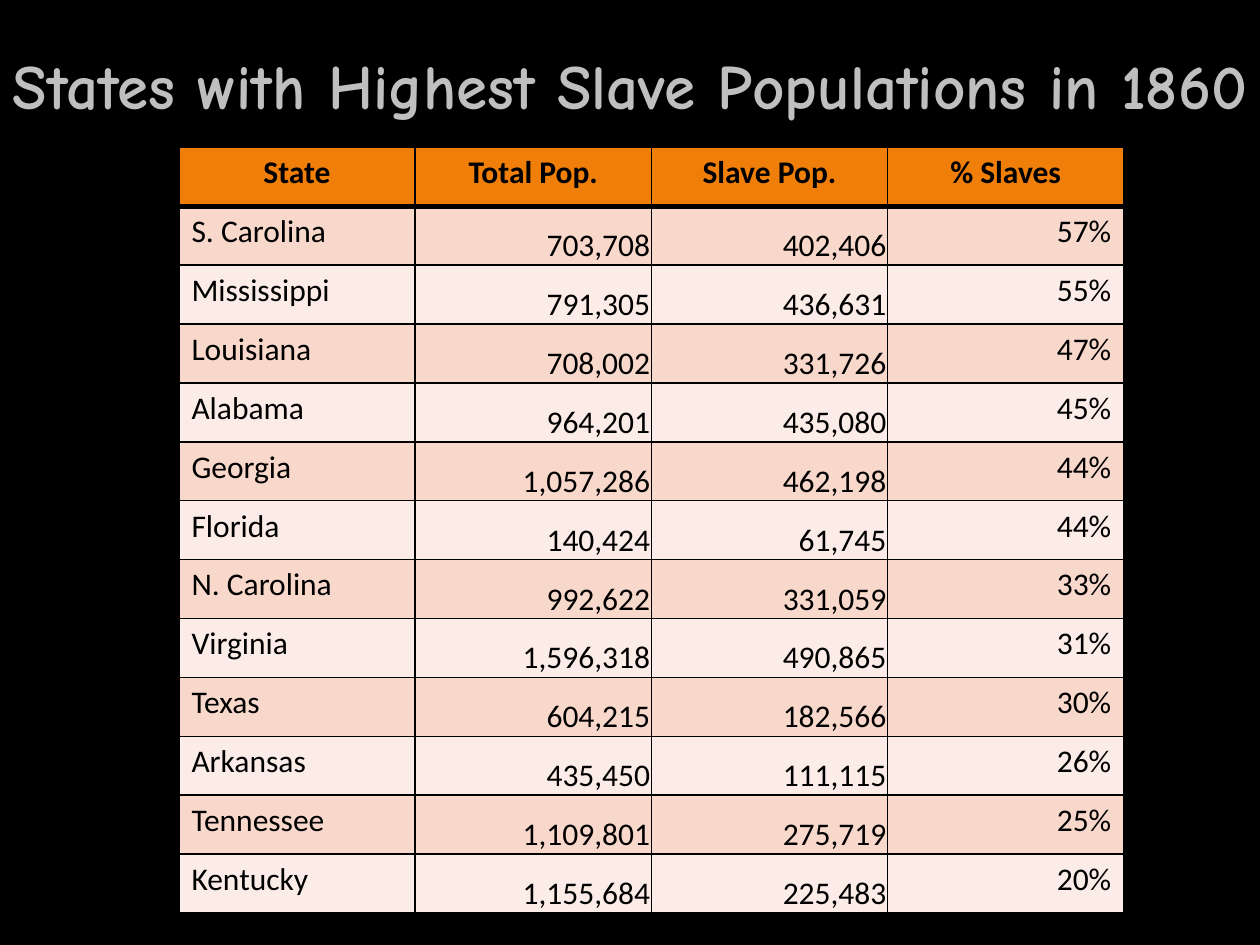
from lxml.etree import SubElement
from pptx import Presentation
from pptx.dml.color import RGBColor as RGB
from pptx.enum.text import MSO_ANCHOR as Anchor, PP_ALIGN as Align
from pptx.oxml.ns import qn
from pptx.util import Inches, Pt

COLORS = {
    "black": "000000",
    "title": "BFBFBF",
    "header": "F07F09",
    "dark_band": "F9D8CC",
    "light_band": "FCECE7",
}
TITLE_FONT = {"name": "Comic Neue", "size": Pt(36), "bold": True}
HEADER_FONT = {"name": "Calibri", "size": Pt(18), "bold": True}
BODY_FONT = {**HEADER_FONT, "bold": False}

NUMBER_CELL = {
    "vertical_anchor": Anchor.BOTTOM,
    "margin_left": Inches(0.01),
    "margin_right": Inches(0.01),
    "margin_top": Inches(0.01),
    "margin_bottom": 0,
}
TEXT_CELL = {"vertical_anchor": Anchor.TOP}
COLUMN_ALIGNS = [Align.LEFT, Align.RIGHT, Align.RIGHT, Align.RIGHT]
COLUMN_FORMATS = [TEXT_CELL, NUMBER_CELL, NUMBER_CELL, TEXT_CELL]

HEADINGS = ["State", "Total Pop.", "Slave Pop.", "% Slaves"]
STATES = [
    ("S. Carolina", 703708, 402406, 57),
    ("Mississippi", 791305, 436631, 55),
    ("Louisiana", 708002, 331726, 47),
    ("Alabama", 964201, 435080, 45),
    ("Georgia", 1057286, 462198, 44),
    ("Florida", 140424, 61745, 44),
    ("N. Carolina", 992622, 331059, 33),
    ("Virginia", 1596318, 490865, 31),
    ("Texas", 604215, 182566, 30),
    ("Arkansas", 435450, 111115, 26),
    ("Tennessee", 1109801, 275719, 25),
    ("Kentucky", 1155684, 225483, 20),
]


def set_all(target, values):
    for name, value in values.items():
        setattr(target, name, value)


class SlideBuilder:
    def __init__(self, deck):
        self.slide = deck.slides.add_slide(deck.slide_layouts[6])
        self.paint(self.slide.background.fill, "black")

    def paint(self, fill, color):
        fill.solid()
        fill.fore_color.rgb = RGB.from_string(COLORS[color])

    def add_text(self, frame, text, align, font, color):
        para = frame.paragraphs[0]
        para.alignment = align
        span = para.add_run()
        span.text = text
        set_all(span.font, font)
        span.font.color.rgb = RGB.from_string(COLORS[color])

    def title(self, text, left, top, width, height):
        box = self.slide.shapes.add_textbox(left, top, width, height)
        set_all(box.text_frame, {
            "word_wrap": True,
            "vertical_anchor": Anchor.MIDDLE,
            "margin_left": 0,
            "margin_right": 0,
        })
        self.add_text(box.text_frame, text, Align.CENTER, TITLE_FONT, "title")

    def borders(self, cell, top, bottom):
        """Rule all four sides; top and bottom are widths in points."""
        properties = cell._tc.get_or_add_tcPr()
        for side, width in {"L": 1, "R": 1, "T": top, "B": bottom}.items():
            line = SubElement(properties, qn(f"a:ln{side}"), w=str(Pt(width)))
            fill = SubElement(line, qn("a:solidFill"))
            SubElement(fill, qn("a:srgbClr"), val=COLORS["black"])

    def cell(self, cell, text, align, font, fill, values, top=1, bottom=1):
        self.borders(cell, top, bottom)
        self.paint(cell.fill, fill)
        set_all(cell, values)
        self.add_text(cell.text_frame, text, align, font, "black")

    def table(self, headings, rows, left, top, width, height):
        table = self.slide.shapes.add_table(
            len(rows) + 1, len(headings), left, top, width, height).table
        table.horz_banding = False
        for column, heading in enumerate(headings):
            self.cell(table.cell(0, column), heading, Align.CENTER,
                      HEADER_FONT, "header", TEXT_CELL, bottom=3)
        for number, row in enumerate(rows, 1):
            band = "dark_band" if number % 2 else "light_band"
            rule = 3 if number == 1 else 1
            columns = zip(row, COLUMN_ALIGNS, COLUMN_FORMATS)
            for column, (text, align, values) in enumerate(columns):
                self.cell(table.cell(number, column), text, align,
                          BODY_FONT, band, values, top=rule)


def main():
    deck = Presentation()
    deck.slide_width, deck.slide_height = Inches(10), Inches(7.5)
    builder = SlideBuilder(deck)
    builder.title("States with Highest Slave Populations in 1860",
                  0, Inches(0.17), Inches(10), Inches(1))
    rows = [(state, f"{total:,}", f"{slaves:,}", f"{share}%")
            for state, total, slaves, share in STATES]
    builder.table(HEADINGS, rows,
                  Inches(1.42), Inches(1.17), Inches(7.5), Inches(6.08))
    deck.save("out.pptx")


if __name__ == "__main__":
    main()
